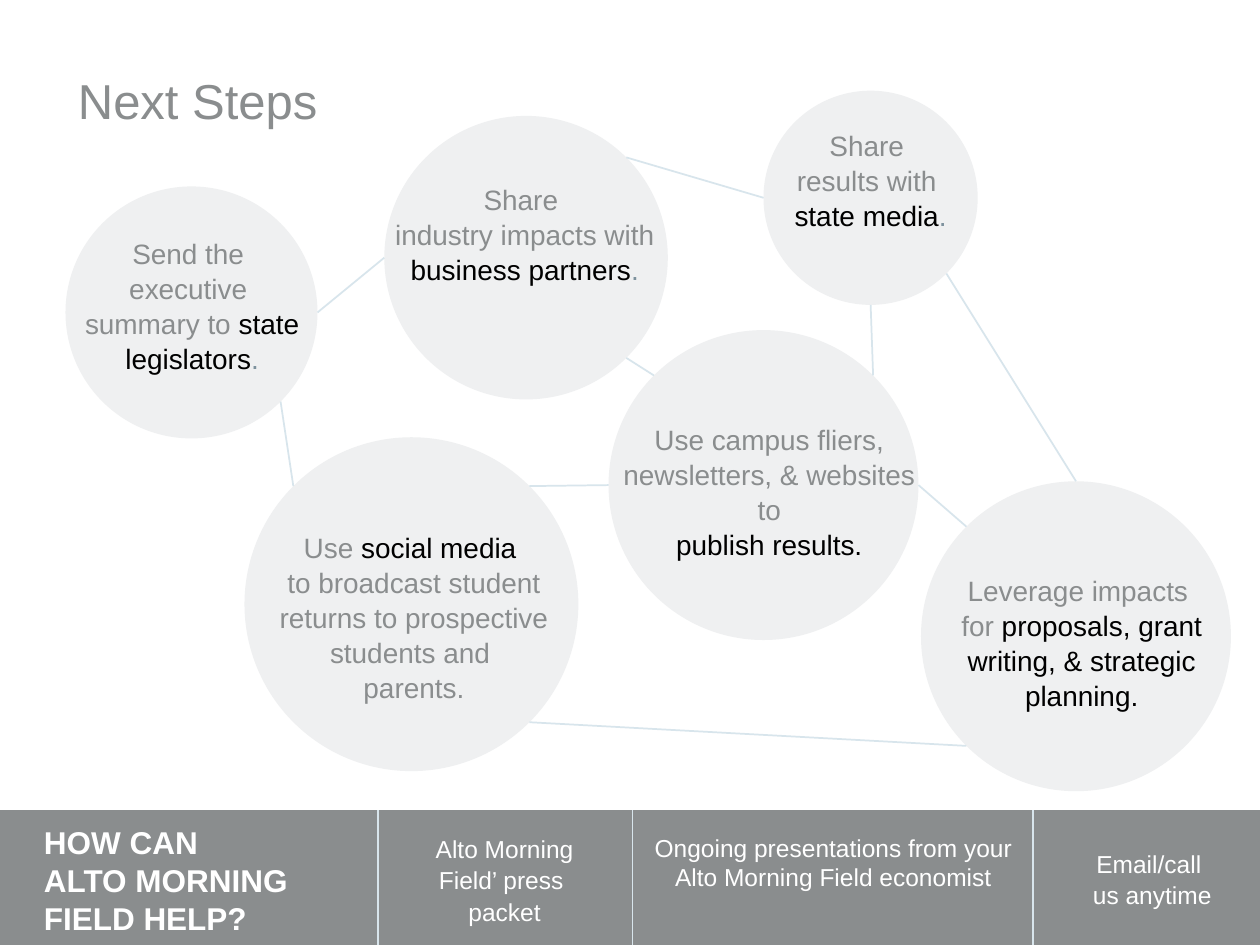
from dataclasses import dataclass
from math import cos, radians, sin

from lxml import etree
from pptx import Presentation
from pptx.dml.color import RGBColor
from pptx.enum import shapes, text
from pptx.oxml.ns import qn
from pptx.util import Inches, Pt


@dataclass(frozen=True)
class Theme:
    font: str = "Arial"
    gray: str = "8A8D8E"
    bubble: str = "EFF0F1"
    black: str = "000000"
    white: str = "FFFFFF"
    period: str = "7D919D"
    line: str = "D8E5EC"
    title: int = 28
    heading: int = 18
    body: int = 16
    footer: int = 14


theme = Theme()
CENTER = text.PP_ALIGN.CENTER


def add_text(parent, box, runs, size, bold=False, align=None, leading=None,
             before=0, anchor=text.MSO_ANCHOR.TOP, wrap=True):
    """Add a one-paragraph text box; runs are (wording, colour), "\\n" breaks a line."""
    frame = parent.add_textbox(*map(Inches, box)).text_frame
    frame.word_wrap = wrap
    frame.vertical_anchor = anchor
    paragraph = frame.paragraphs[0]
    paragraph.alignment = align
    paragraph.space_before = Pt(before)
    if leading:
        paragraph.line_spacing = Pt(leading)
    for wording, color in runs:
        for i, part in enumerate(wording.split("\n")):
            if i:
                paragraph.add_line_break()
            if part:
                run = paragraph.add_run()
                run.text = part
                run.font.name = theme.font
                run.font.size = Pt(size)
                run.font.bold = bold
                run.font.color.rgb = RGBColor.from_string(color)


def add_filled(parent, kind, box, color):
    shape = parent.add_shape(kind, *map(Inches, box))
    shape.shadow.inherit = False
    shape.fill.solid()
    shape.fill.fore_color.rgb = RGBColor.from_string(color)
    shape.line.fill.background()


prs = Presentation()
prs.slide_width, prs.slide_height = Inches(10), Inches(7.5)
slide = prs.slides.add_slide(prs.slide_layouts[6])

add_text(slide.shapes, (0.52, 0.51, 8.42, 0.82), [("Next Steps", theme.gray)],
         theme.title, before=4)

# Each step: circle (left, top, diameter), caption box, caption runs
steps = {
    "legislators": ((0.52, 1.48, 2), (0.36, 1.82, 2.33, 1.21), [
        ("Send the \nexecutive \nsummary to ", theme.gray),
        ("state legislators", theme.black), (".", theme.period)]),
    "social": ((1.94, 3.47, 2.65), (1.96, 4.15, 2.65, 1.49), [
        ("Use ", theme.gray), ("social media \n", theme.black),
        ("to broadcast student returns to prospective students and \nparents.",
         theme.gray)]),
    "partners": ((3.05, 0.92, 2.25), (3, 1.39, 2.33, 1.21), [
        ("Share \nindustry impacts with ", theme.gray),
        ("business partners", theme.black), (".", theme.period)]),
    "proposals": ((7.31, 3.82, 2.46), (7.26, 4.49, 2.65, 1.21), [
        ("Leverage impacts \nfor ", theme.gray),
        ("proposals, grant writing, & strategic planning.", theme.black)]),
    "campus": ((4.83, 2.62, 2.46), (4.78, 3.29, 2.65, 1.21), [
        ("Use campus fliers, newsletters, & websites to\n", theme.gray),
        ("publish results.", theme.black)]),
    "media": ((6.06, 0.72, 1.7), (5.83, 0.96, 2.16, 0.93), [
        ("Share \nresults with \n", theme.gray),
        ("state media", theme.black), (".", theme.period)]),
}
for (left, top, diameter), caption_box, caption in steps.values():
    step = slide.shapes.add_group_shape().shapes
    add_filled(step, shapes.MSO_SHAPE.OVAL, (left, top, diameter, diameter), theme.bubble)
    add_text(step, caption_box, caption, theme.body, align=CENTER, leading=20, before=12)

# Footer band
footer_top = 6.43
add_filled(slide.shapes, shapes.MSO_SHAPE.RECTANGLE, (0, footer_top, 10, 1.09), theme.gray)
add_text(slide.shapes, (0.25, 6.7, 2.92, 0.57),
         [("HOW CAN \nALTO MORNING FIELD HELP?", theme.white)],
         theme.heading, bold=True, anchor=text.MSO_ANCHOR.MIDDLE)
offers = [
    ((3.18, 6.55, 1.65, 0.85), "Alto Morning Field’ press \npacket", 18, True),
    ((5.05, 6.56, 3.13, 0.81),
     "Ongoing presentations from your Alto Morning Field economist", None, True),
    ((8.54, 6.67, 1.21, 0.59), "Email/call \nus anytime", 18, False),
]
for box, offer, leading, wrap in offers:
    add_text(slide.shapes, box, [(offer, theme.white)], theme.footer,
             align=CENTER, leading=leading, before=12, wrap=wrap)

# Links join circle rims at compass angles, clockwise from east
E, SE, S, SW, W, NW, N, NE = range(0, 360, 45)
links = [
    ("legislators", SE, "social", NW),
    ("legislators", E, "partners", W),
    ("partners", NE, "media", W),
    ("social", SE, "proposals", SW),
    ("partners", SE, "campus", NW),
    ("media", SE, "proposals", N),
    ("campus", E, "proposals", NW),
    ("social", NE, "campus", W),
    ("campus", NE, "media", S),
]
segments = []
for start, start_angle, end, end_angle in links:
    segment = []
    for name, angle in ((start, start_angle), (end, end_angle)):
        left, top, diameter = steps[name][0]
        radius = diameter / 2
        segment += [left + radius * (1 + cos(radians(angle))),
                    top + radius * (1 + sin(radians(angle)))]
    segments.append(segment)
segments += [(x, footer_top, x, 7.5) for x in (3, 5.02, 8.2)]

for segment in segments:
    link = slide.shapes.add_connector(shapes.MSO_CONNECTOR.STRAIGHT, *map(Inches, segment))
    link.line.color.rgb = RGBColor.from_string(theme.line)
    link.line.width = Pt(1)
    etree.SubElement(link._element.spPr, qn("a:effectLst"))

prs.save("out.pptx")
